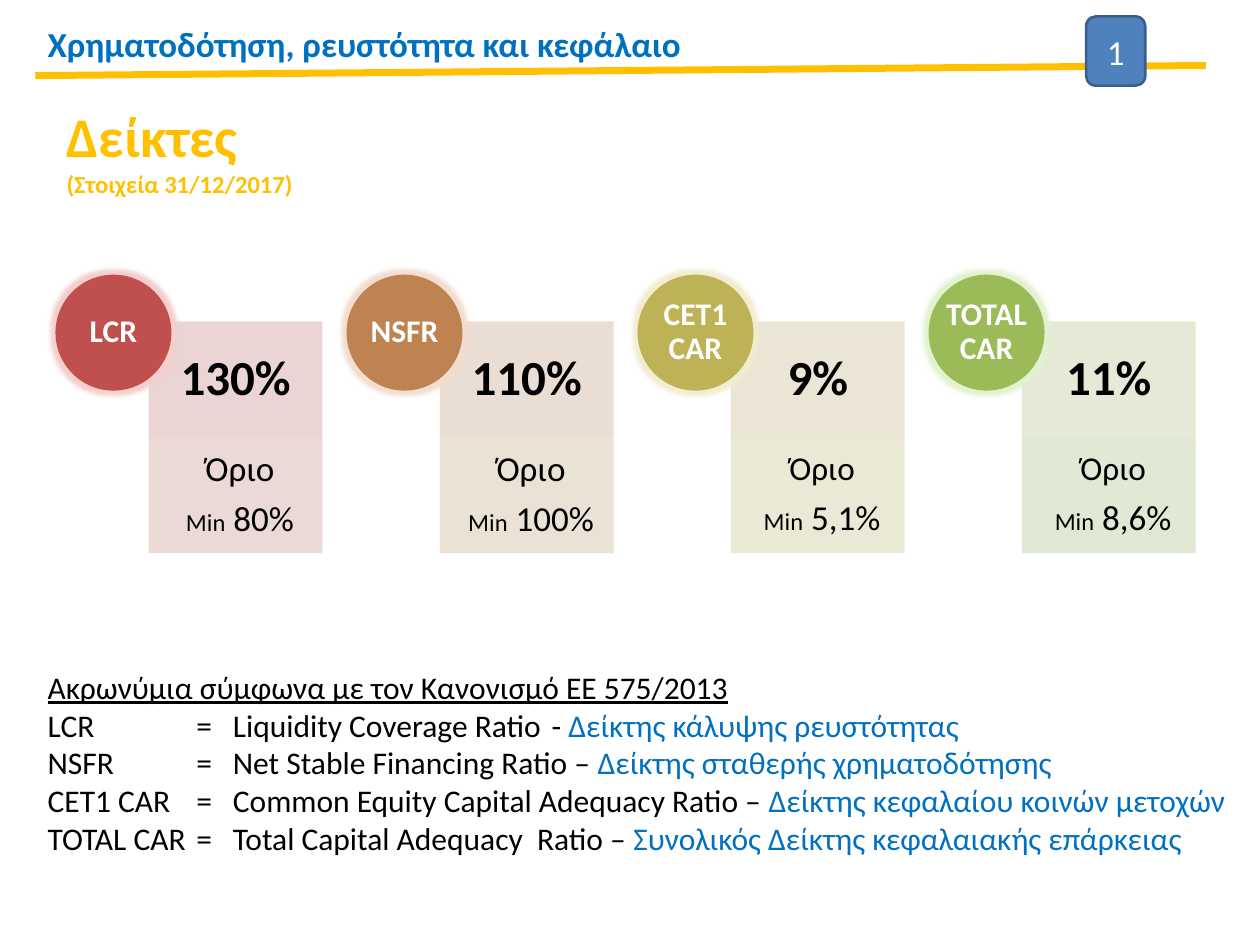
"""Build a slide of bank liquidity and capital ratios with their regulatory limits."""
from lxml import etree
from pptx import Presentation
from pptx import util as u
from pptx.dml import color
from pptx.enum import shapes, text
from pptx.oxml import ns

FONT = "Calibri"
BLUE, GOLD, BLACK, WHITE = "0070C0", "FFC000", "000000", "FFFFFF"
HEADING = "Χρηματοδότηση, ρευστότητα και κεφάλαιο"
TITLE, SUBTITLE = "Δείκτες", "(Στοιχεία 31/12/2017)"
PAGE = "1"
RATIOS = [
    {"name": "LCR", "value": "130%", "limit": "80%", "label_size": 20,
     "colors": ("C0504D", "E8D0D0", "E8D5D0"), "glow": "F4CFCE"},
    {"name": "NSFR", "value": "110%", "limit": "100%", "label_size": 20,
     "colors": ("BE8351", "E8DAD0", "E8DFD1"), "glow": "F3DDCF"},
    {"name": "CET1 CAR", "value": "9%", "limit": "5,1%", "label_size": 19,
     "colors": ("BDB255", "E8E3D1", "E7E7D1"), "glow": "F2EDD0"},
    {"name": "TOTAL CAR", "value": "11%", "limit": "8,6%", "label_size": 19,
     "colors": ("9BBB59", "E3E7D1", "DEE7D1"), "glow": "E3F2CF"},
]
ACRONYM_HEADING = "Ακρωνύμια σύμφωνα με τον Κανονισμό ΕΕ 575/2013"
ACRONYMS = [
    ("LCR", "Liquidity Coverage Ratio \t- ", "Δείκτης κάλυψης ρευστότητας"),
    ("NSFR", "Net Stable Financing Ratio – ", "Δείκτης σταθερής χρηματοδότησης"),
    ("CET1 CAR", "Common Equity Capital Adequacy Ratio – ", "Δείκτης κεφαλαίου κοινών μετοχών"),
    ("TOTAL CAR", "Total Capital Adequacy  Ratio – ", "Συνολικός Δείκτης κεφαλαιακής επάρκειας"),
]
ACRONYM_TABS = (1.18, 1.47)
LEFT, TOP, PITCH = 0.44, 2.18, 2.31
CIRCLE, CARD_WIDTH, CARD_HEIGHT = 0.92, 1.38, 0.92
CARD_DX, CARD_DY = 0.74, 0.37


def rgb(value):
    return color.RGBColor.from_string(value)


def add_element(parent, tag, **attributes):
    element = etree.SubElement(parent, ns.qn(tag))
    for name, value in attributes.items():
        element.set(name, str(value))
    return element


def write(shape, paragraphs, size=18, ink=BLACK, bold=False, align=None, anchor=None,
          insets=None, wrap=True, line_spacing=None, space_after=None, tabs=()):
    """Fill a shape with paragraphs, each a list of (text, overrides) runs."""
    frame = shape.text_frame
    frame.word_wrap = wrap
    if anchor is not None:
        frame.vertical_anchor = anchor
    if insets:
        (frame.margin_left, frame.margin_top,
         frame.margin_right, frame.margin_bottom) = map(u.Inches, insets)
    for index, runs in enumerate(paragraphs):
        paragraph = frame.add_paragraph() if index else frame.paragraphs[0]
        if align is not None:
            paragraph.alignment = align
        if line_spacing:
            paragraph.line_spacing = line_spacing
        if space_after:
            paragraph.space_after = u.Pt(space_after)
        if tabs:
            tab_list = add_element(paragraph._p.get_or_add_pPr(), "a:tabLst")
            for stop in tabs:
                add_element(tab_list, "a:tab", pos=u.Inches(stop), algn="l")
        for words, style in runs:
            run = paragraph.add_run()
            run.text = words
            run.font.name = FONT
            run.font.size = u.Pt(style.get("size", size))
            run.font.bold = bold
            run.font.underline = style.get("underline", False)
            run.font.color.rgb = rgb(style.get("ink", ink))


def add_text(slide, box, paragraphs, **style):
    shape = slide.shapes.add_textbox(*map(u.Inches, box))
    write(shape, paragraphs, **style)
    if not style.get("wrap", True):
        shape.text_frame.auto_size = text.MSO_AUTO_SIZE.SHAPE_TO_FIT_TEXT


def add_box(slide, kind, box, fill, paragraphs, alpha=None, line=None, **style):
    shape = slide.shapes.add_shape(kind, *map(u.Inches, box))
    shape.shadow.inherit = False
    shape.fill.solid()
    shape.fill.fore_color.rgb = rgb(fill)
    if alpha:
        fill_color = shape._element.spPr.find(".//" + ns.qn("a:srgbClr"))
        add_element(fill_color, "a:alpha", val=alpha * 1000)
    if line:
        shape.line.color.rgb = rgb(line)
        shape.line.width = u.Pt(1.5)
    else:
        shape.line.fill.background()
    write(shape, paragraphs, align=text.PP_ALIGN.CENTER,
          anchor=text.MSO_ANCHOR.MIDDLE, **style)
    return shape


def add_ratio(slide, left, ratio):
    circle_color, value_color, limit_color = ratio["colors"]
    rectangle = shapes.MSO_SHAPE.RECTANGLE
    card_left, card_top = left + CARD_DX, TOP + CARD_DY
    add_box(slide, rectangle, (card_left, card_top, CARD_WIDTH, CARD_HEIGHT), value_color,
            [[(ratio["value"], {})]], alpha=90, size=28, bold=True,
            insets=(0.22, 0.22, 0.22, 0.22), line_spacing=0.9)
    add_box(slide, rectangle, (card_left, card_top + CARD_HEIGHT, CARD_WIDTH, CARD_HEIGHT),
            limit_color,
            [[("Όριο", {"size": ratio["label_size"]})],
             [("Min", {"size": 14}), (" " + ratio["limit"], {})]],
            alpha=90, size=20, insets=(0.22, 0.15, 0.15, 0.15),
            line_spacing=0.9, space_after=7)
    circle = add_box(slide, shapes.MSO_SHAPE.OVAL, (left, TOP, CIRCLE, CIRCLE), circle_color,
                     [[(ratio["name"], {})]], ink=WHITE, bold=True,
                     insets=(0, 0, 0, 0), line_spacing=0.9)
    effects = circle._element.spPr.find(ns.qn("a:effectLst"))
    glow = add_element(effects, "a:glow", rad=u.Pt(5))
    add_element(glow, "a:srgbClr", val=ratio["glow"])


def main():
    presentation = Presentation()
    presentation.slide_width, presentation.slide_height = u.Inches(10), u.Inches(7.5)
    slide = presentation.slides.add_slide(presentation.slide_layouts[6])

    for index, ratio in enumerate(RATIOS):
        add_ratio(slide, LEFT + index * PITCH, ratio)

    add_text(slide, (0.28, 0.13, 5.27, 0.44), [[(HEADING, {})]],
             size=20, ink=BLUE, bold=True, wrap=False)
    rule = slide.shapes.add_connector(
        shapes.MSO_CONNECTOR.STRAIGHT, *map(u.Inches, (0.28, 0.6, 9.57, 0.52)))
    rule.line.color.rgb = rgb(GOLD)
    rule.line.width = u.Pt(4)
    add_element(rule._element.spPr, "a:effectLst")
    add_box(slide, shapes.MSO_SHAPE.ROUNDED_RECTANGLE, (8.62, 0.13, 0.47, 0.55), "4F81BD",
            [[(PAGE, {})]], line="3A5F8C", size=20, ink=WHITE)
    add_text(slide, (0.43, 0.76, 2.01, 0.88), [[(TITLE, {})], [(SUBTITLE, {"size": 14})]],
             size=32, ink=GOLD, bold=True, wrap=False)

    acronym_lines = [[(f"{name}\t=\t{english}", {}), (greek, {"ink": BLUE})]
                     for name, english, greek in ACRONYMS]
    add_text(slide, (0.28, 5.25, 9.61, 1.62),
             [[(ACRONYM_HEADING, {"underline": True})]] + acronym_lines, tabs=ACRONYM_TABS)
    presentation.save("out.pptx")


if __name__ == "__main__":
    main()
